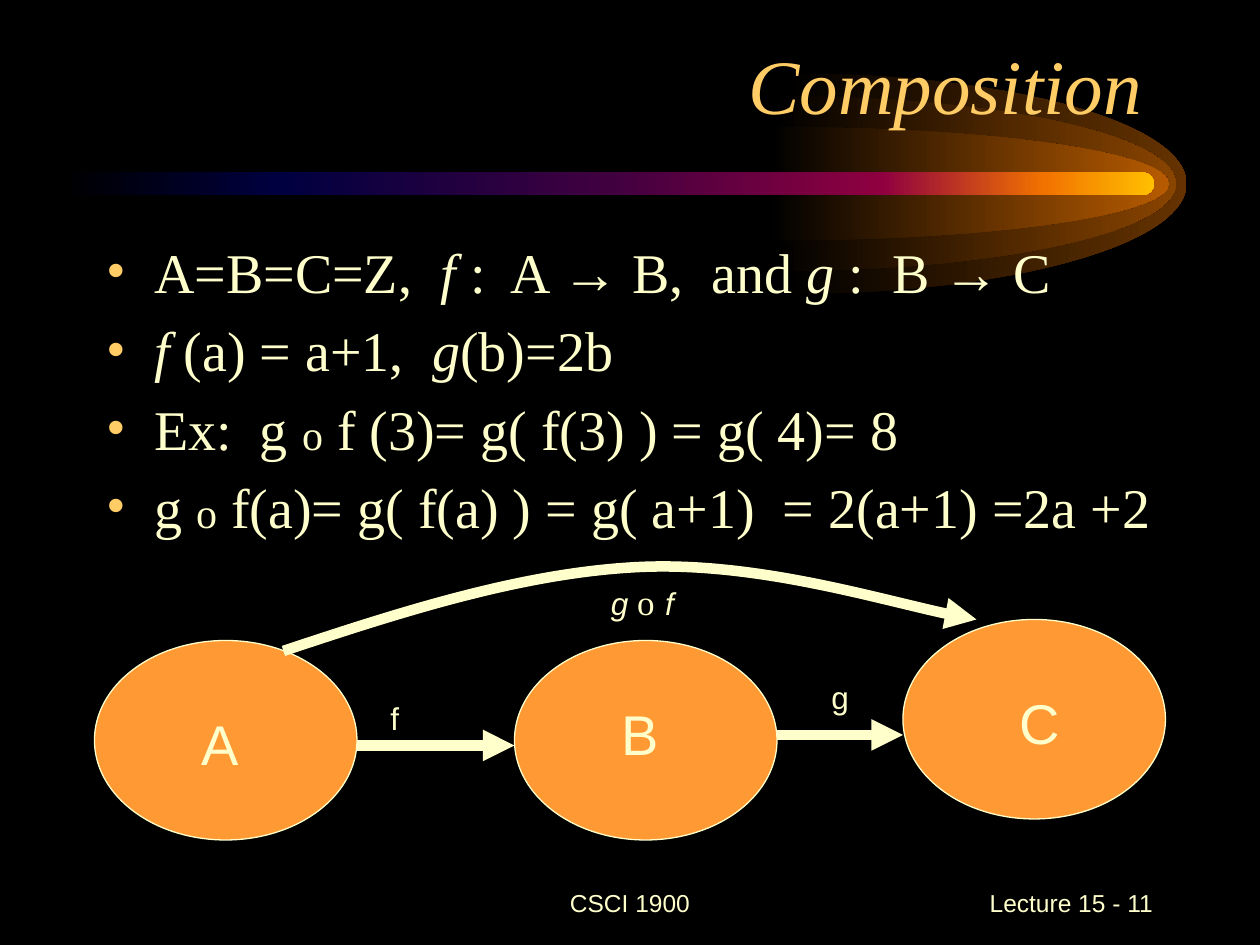
from lxml import etree
from pptx import Presentation
from pptx.dml.color import RGBColor
from pptx.enum.shapes import MSO_CONNECTOR, MSO_SHAPE
from pptx.enum.text import MSO_ANCHOR, MSO_AUTO_SIZE, PP_ALIGN
from pptx.oxml.ns import qn
from pptx.util import Pt

LEFT, CENTER, RIGHT = PP_ALIGN.LEFT, PP_ALIGN.CENTER, PP_ALIGN.RIGHT
TOP, MIDDLE, BOTTOM = MSO_ANCHOR.TOP, MSO_ANCHOR.MIDDLE, MSO_ANCHOR.BOTTOM
ELLIPSE, ROUNDED = MSO_SHAPE.OVAL, MSO_SHAPE.ROUNDED_RECTANGLE
STRAIGHT = MSO_CONNECTOR.STRAIGHT
FIT_TEXT = MSO_AUTO_SIZE.SHAPE_TO_FIT_TEXT

SANS, SERIF = "Arial", "Times New Roman"
BLACK, CREAM, GOLD, ORANGE = "000000", "FFFFCC", "FFCC66", "FF9933"
AXIS, REACH, ROUNDNESS = 105, 225, 0.55
GLOWS = [(453, 63, "663300"), (447, 50, "894400"), (443, 32.5, "B75B00")]
COMET = [(0, BLACK), (20, "000040"), (50, "400040"),
         (75, "8F0040"), (90, "F27300"), (100, "FFBF00")]
COMPOSITION_ARC = [(162, 372), (231, 349), (300, 327), (366, 324),
                   (432, 321), (525, 349), (558, 354)]
ITALIC = {"italic": True}
SMALL = {"size": 24}
BULLETS = [
    [("A=B=C=Z,  ", {}), ("f", ITALIC), (" :  A → B,  and ", {}),
     ("g", ITALIC), (" :  B → C", {})],
    [("f ", ITALIC), ("(a) = a+1,  ", {}), ("g", ITALIC), ("(b)=2b", {})],
    [("Ex:  g ", {}), ("ο", SMALL), (" f (3)= g( f(3) ) = g( 4)= 8", {})],
    [("g ", {}), ("ο", SMALL),
     (" f(a)= g( f(a) ) = g( a+1)  = 2(a+1) =2a +2", {})],
]
SETS = [("A", (54, 366), (84, 402)),
        ("B", (294, 366), (324, 396)),
        ("C", (516, 354), (552, 390))]


def color(value):
    return RGBColor.from_string(value)


def add_child(parent, tag, **attributes):
    return etree.SubElement(parent, qn(tag), attributes)


def add_box(page, left, top, width, height, anchor=TOP, grow=False):
    box = page.shapes.add_textbox(Pt(left), Pt(top), Pt(width), Pt(height))
    frame = box.text_frame
    frame.word_wrap = True
    frame.vertical_anchor = anchor
    if grow:
        frame.auto_size = FIT_TEXT
    return frame


def add_span(para, text, size=32, font=SANS, fill=CREAM, italic=False):
    span = para.add_run()
    span.text = text
    span.font.size = Pt(size)
    span.font.name = font
    span.font.italic = italic
    span.font.color.rgb = color(fill)


def space_before(para, percent):
    spacing = add_child(para._p.get_or_add_pPr(), "a:spcBef")
    add_child(spacing, "a:spcPct", val=str(percent * 1000))


def add_bullet(para):
    properties = para._p.get_or_add_pPr()
    properties.set("marL", str(Pt(27)))
    properties.set("indent", str(Pt(-27)))
    bullet_color = add_child(properties, "a:buClr")
    add_child(bullet_color, "a:srgbClr", val=GOLD)
    add_child(properties, "a:buFont", typeface=SERIF)
    add_child(properties, "a:buChar", char="•")


def add_label(page, area, spans, align=LEFT, **style):
    para = add_box(page, *area, grow=True).paragraphs[0]
    para.alignment = align
    space_before(para, 50)
    for text, changes in spans:
        add_span(para, text, **{**style, **changes})


def add_line_of_text(page, area, text, align, anchor, **style):
    para = add_box(page, *area, anchor=anchor).paragraphs[0]
    para.alignment = align
    add_span(para, text, **style)


def fill_gradient(shape, stops):
    shape.shadow.inherit = False
    shape.line.fill.background()
    shape.fill.gradient()
    shape.fill.gradient_angle = 0
    stop_list = shape._element.spPr.find(".//" + qn("a:gsLst"))
    for old in list(stop_list):
        stop_list.remove(old)
    for position, value in stops:
        stop = add_child(stop_list, "a:gs", pos=str(position * 1000))
        add_child(stop, "a:srgbClr", val=value)


def add_outline(page, points, curves, close=False):
    (first_x, first_y), *rest = [(Pt(x), Pt(y)) for x, y in points]
    builder = page.shapes.build_freeform(first_x, first_y)
    builder.add_line_segments(rest, close=close)
    shape = builder.convert_to_shape()
    lines = list(shape._element.spPr.iter(qn("a:lnTo")))
    for index in range(0, curves * 3, 3):
        first, *others = lines[index:index + 3]
        curve = etree.Element(qn("a:cubicBezTo"))
        first.addprevious(curve)
        for line in (first, *others):
            curve.append(line[0])
            line.getparent().remove(line)
    return shape


def add_glow(page, center, radius, value):
    top, bottom, tip = AXIS - radius, AXIS + radius, center + REACH
    bulge, rise = center + ROUNDNESS * REACH, ROUNDNESS * radius
    points = [(center, top),
              (bulge, top), (tip, AXIS - rise), (tip, AXIS),
              (tip, AXIS + rise), (bulge, bottom), (center - 3.5, bottom),
              (center, AXIS)]
    glow = add_outline(page, points, 2, close=True)
    fill_gradient(glow, [(0, BLACK), (100, value)])


def add_comet(page):
    for glow in GLOWS:
        add_glow(page, *glow)
    bar = page.shapes.add_shape(ROUNDED, Pt(36), Pt(98.5), Pt(623.5), Pt(13))
    bar.adjustments[0] = 0.5
    fill_gradient(bar, COMET)


def add_set(page, left, top):
    oval = page.shapes.add_shape(ELLIPSE, Pt(left), Pt(top), Pt(150), Pt(114))
    oval.shadow.inherit = False
    oval.fill.solid()
    oval.fill.fore_color.rgb = color(ORANGE)
    oval.line.color.rgb = color(CREAM)
    oval.line.width = Pt(0.75)


def style_arrow(arrow):
    arrow.line.color.rgb = color(CREAM)
    arrow.line.width = Pt(6)
    add_child(arrow.line._get_or_add_ln(), "a:tailEnd", type="triangle")


def add_arrow(page, start, end, height):
    arrow = page.shapes.add_connector(
        STRAIGHT, Pt(start), Pt(height), Pt(end), Pt(height))
    style_arrow(arrow)
    add_child(arrow._element.spPr, "a:effectLst")


def add_composition_arrow(page):
    arc = add_outline(page, COMPOSITION_ARC, 2)
    arc.shadow.inherit = False
    arc.fill.background()
    style_arrow(arc)


def add_bullets(page):
    frame = add_box(page, 54, 132, 612, 354)
    for index, spans in enumerate(BULLETS):
        para = frame.add_paragraph() if index else frame.paragraphs[0]
        space_before(para, 20)
        add_bullet(para)
        for text, changes in spans:
            add_span(para, text, font=SERIF, **changes)


def main():
    deck = Presentation()
    deck.slide_width, deck.slide_height = Pt(720), Pt(540)
    page = deck.slides.add_slide(deck.slide_layouts[6])
    page.background.fill.solid()
    page.background.fill.fore_color.rgb = color(BLACK)

    add_comet(page)
    add_line_of_text(page, (246, 498, 228, 36), "CSCI 1900", CENTER, MIDDLE, size=14)
    add_line_of_text(page, (516, 498, 150, 36), " Lecture 15 - 11", RIGHT, MIDDLE, size=14)
    add_line_of_text(page, (48, 18, 612, 60), "Composition", RIGHT, BOTTOM,
                     size=44, font=SERIF, fill=GOLD, italic=True)
    add_bullets(page)

    for name, corner, label in SETS:
        add_set(page, *corner)
    for name, corner, label in SETS:
        add_label(page, (*label, 84, 45.5), [(name, {})], CENTER)
    add_arrow(page, 204, 294, 426)
    add_arrow(page, 444, 516, 420)
    add_label(page, (216, 396, 54, 29), [("f", {})], size=18)
    add_label(page, (468, 384, 36, 29), [("g", {})], size=18)
    add_composition_arrow(page)
    ring = {"size": 20, "font": SERIF}
    add_label(page, (342, 324, 78, 36),
              [("g ", ITALIC), ("ο", ring), (" ", {**ring, **SMALL}), ("f", ITALIC)],
              size=18)
    deck.save("out.pptx")


if __name__ == "__main__":
    main()
